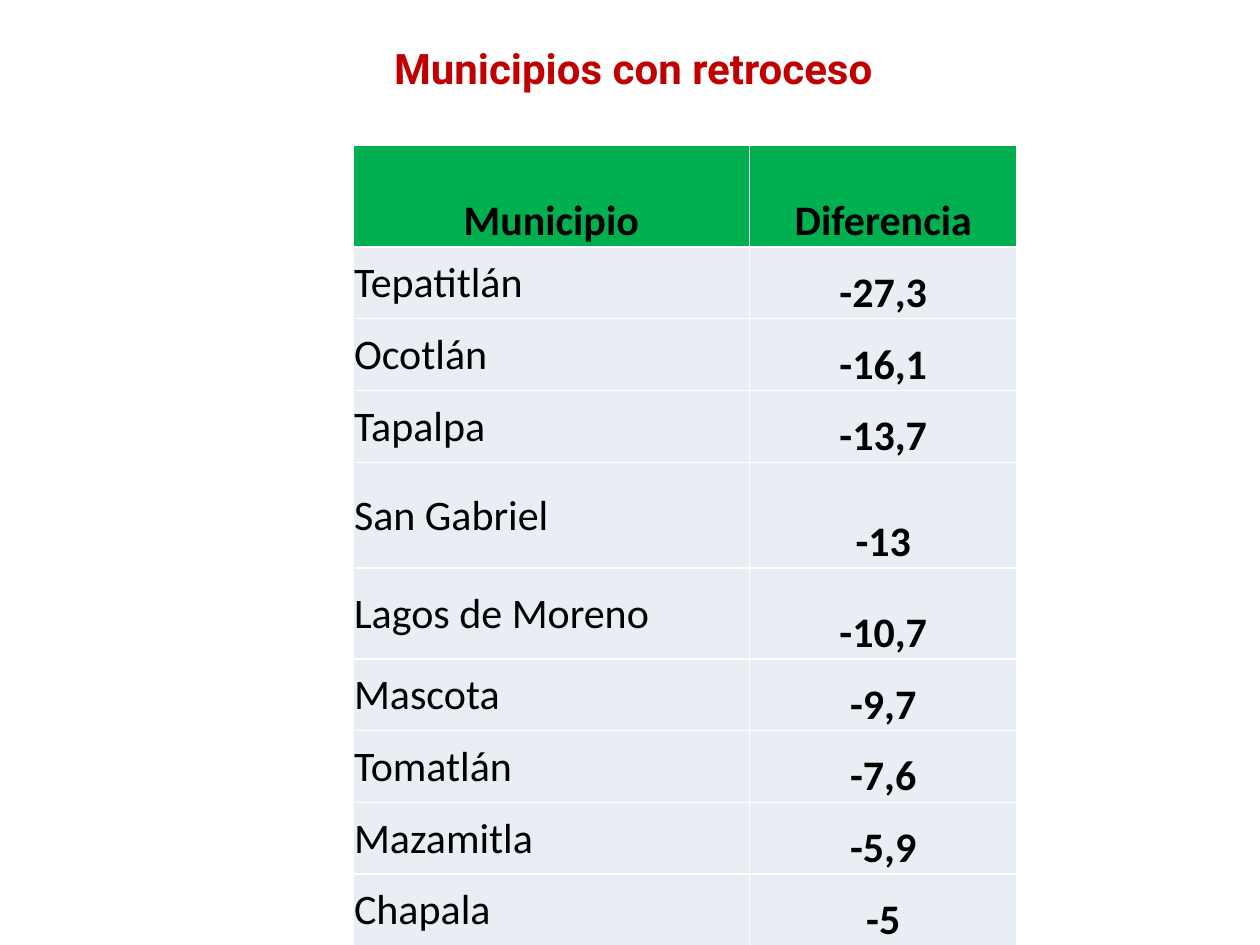
from dataclasses import dataclass
from typing import Any

from pptx import Presentation
from pptx.dml.color import RGBColor
from pptx.enum.text import MSO_ANCHOR as Anchor, PP_ALIGN as Align
from pptx.oxml import parse_xml
from pptx.oxml.ns import nsdecls
from pptx.util import Inches, Pt

HEADINGS = ("Municipio", "Diferencia")
SETBACKS = [
    ("Tepatitlán", "-27,3"),
    ("Ocotlán", "-16,1"),
    ("Tapalpa", "-13,7"),
    ("San Gabriel", "-13"),
    ("Lagos de Moreno", "-10,7"),
    ("Mascota", "-9,7"),
    ("Tomatlán", "-7,6"),
    ("Mazamitla", "-5,9"),
    ("Chapala", "-5"),
]
COLUMN_WIDTHS = (3.15, 2.12)
ROW_HEIGHT = 0.57
TALL_ROWS = {"Municipio": 0.81, "San Gabriel": 0.84, "Lagos de Moreno": 0.72}


def rgb(value):
    return RGBColor.from_string(value)


def apply(target, values):
    for name, value in values.items():
        setattr(target, name, value)


@dataclass
class SlideStyle:
    slide: Any
    title_font: str = "Roboto"
    body_font: str = "Calibri"
    size: int = 24
    title_color: str = "C00000"
    text_color: str = "000000"
    header_fill: str = "00B050"
    body_fill: str = "E9EDF4"
    border_color: str = "FFFFFF"

    def add_text(self, frame, text, font, color, bold, align):
        paragraph = frame.paragraphs[0]
        paragraph.alignment = align
        run = paragraph.add_run()
        run.text = text
        apply(run.font, {"name": font, "size": Pt(self.size), "bold": bold})
        run.font.color.rgb = rgb(color)

    def title(self, text, left, top, width, height):
        box = self.slide.shapes.add_textbox(*map(Inches, (left, top, width, height)))
        box.text_frame.word_wrap = True
        self.add_text(box.text_frame, text, self.title_font, self.title_color,
                      True, Align.LEFT)

    def borders(self, cell):
        properties = cell._tc.get_or_add_tcPr()
        for position, side in enumerate(("lnL", "lnR", "lnT", "lnB")):
            properties.insert(position, parse_xml(
                f'<a:{side} {nsdecls("a")} w="{Pt(1)}"><a:solidFill>'
                f'<a:srgbClr val="{self.border_color}"/></a:solidFill></a:{side}>'))

    def cell(self, cell, text, is_header, is_name):
        plain = is_name and not is_header
        apply(cell, {
            "margin_left": Inches(0.01),
            "margin_right": Inches(0.01),
            "margin_top": Inches(0.01),
            "margin_bottom": 0,
            "vertical_anchor": Anchor.MIDDLE if plain else Anchor.BOTTOM,
        })
        cell.fill.solid()
        cell.fill.fore_color.rgb = rgb(self.header_fill if is_header else self.body_fill)
        self.borders(cell)
        self.add_text(cell.text_frame, text, self.body_font, self.text_color,
                      not plain, Align.LEFT if plain else Align.CENTER)

    def table(self, rows, left, top):
        heights = [TALL_ROWS.get(name, ROW_HEIGHT) for name, _ in rows]
        table = self.slide.shapes.add_table(
            len(rows), len(COLUMN_WIDTHS), Inches(left), Inches(top),
            Inches(sum(COLUMN_WIDTHS)), Inches(sum(heights))).table
        table.horz_banding = False
        for column, width in zip(table.columns, COLUMN_WIDTHS):
            column.width = Inches(width)
        for r, (row, height) in enumerate(zip(rows, heights)):
            table.rows[r].height = Inches(height)
            for c, text in enumerate(row):
                self.cell(table.cell(r, c), text, r == 0, c == 0)


def main():
    deck = Presentation()
    apply(deck, {"slide_width": Inches(10), "slide_height": Inches(7.5)})
    page = SlideStyle(deck.slides.add_slide(deck.slide_layouts[6]))

    # Title
    page.title("Municipios con retroceso", 3.03, 0.29, 4.8, 0.5)

    # Municipalities and their change
    page.table([HEADINGS, *SETBACKS], 2.8, 1.15)

    deck.save("out.pptx")


if __name__ == "__main__":
    main()
